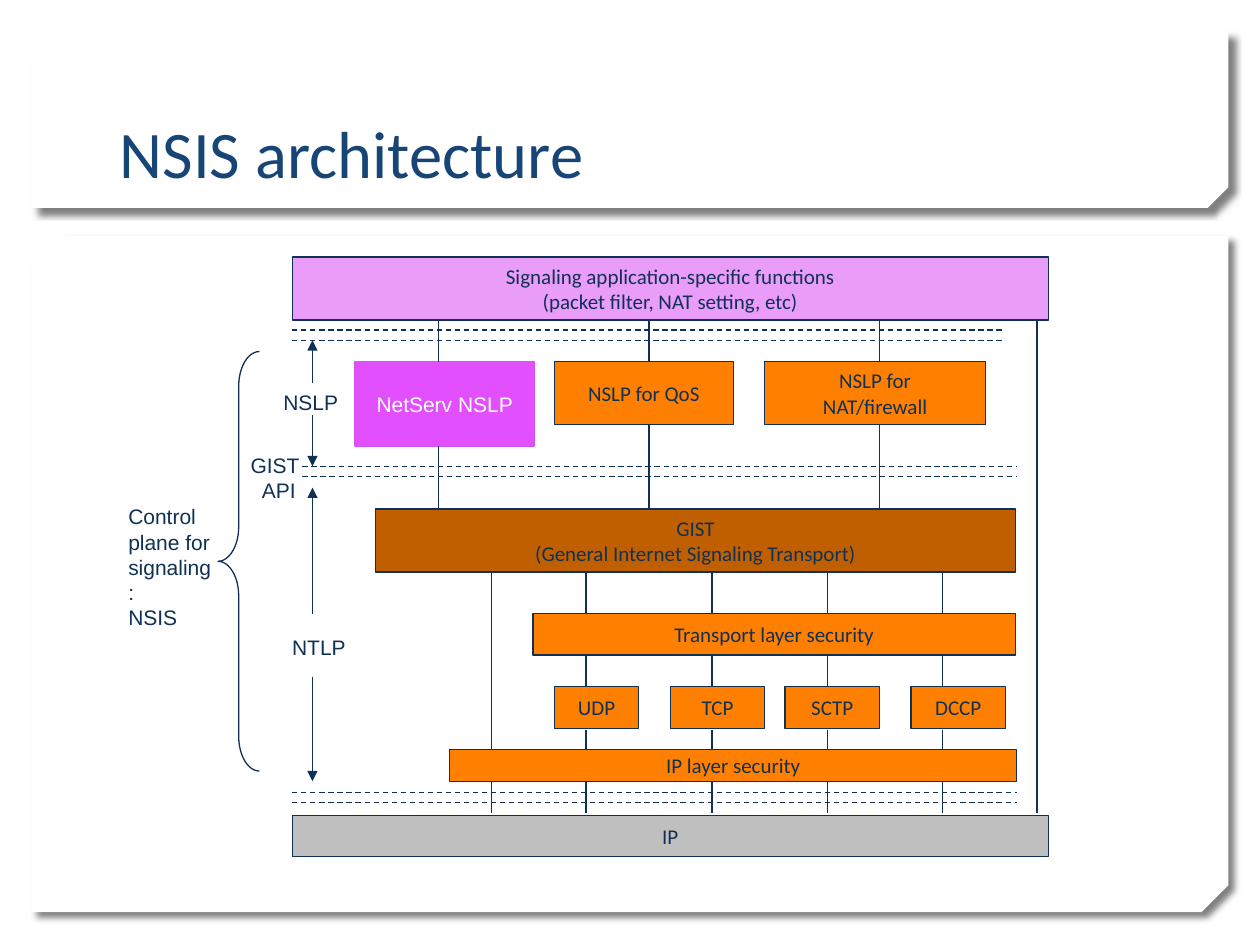
from dataclasses import dataclass

from lxml import etree
from pptx import Presentation
from pptx.dml.color import RGBColor
from pptx.enum.dml import MSO_LINE
from pptx.enum.shapes import MSO_CONNECTOR, MSO_SHAPE as Preset
from pptx.enum.text import MSO_ANCHOR as Anchor, MSO_AUTO_SIZE as AutoSize, PP_ALIGN as Align
from pptx.oxml.ns import qn
from pptx.util import Inches, Pt


@dataclass(frozen=True)
class Theme:
    """Colours, fonts and type sizes of the slide."""
    ink: str = "103154"
    title: str = "174576"
    white: str = "FFFFFF"
    shadow: str = "000000"
    lilac: str = "E99CF8"
    magenta: str = "E14FFF"
    magenta_edge: str = "D854F2"
    orange: str = "FF7F01"
    brown: str = "C05F00"
    grey: str = "BFBFBF"
    heading_font: str = "Calibri"
    label_font: str = "Arial"
    title_size: float = 38
    body_size: float = 12
    thin: float = 0.75
    medium: float = 1


def write_text(frame, text, *, font, size, color, align=Align.LEFT, anchor=Anchor.TOP, wrap=False):
    """Fill a text frame, one paragraph per line of text."""
    frame.word_wrap = wrap
    frame.vertical_anchor = anchor
    for number, line in enumerate(text.split("\n")):
        paragraph = frame.paragraphs[0] if number == 0 else frame.add_paragraph()
        paragraph.alignment = align
        run = paragraph.add_run()
        run.text = line
        run.font.name = font
        run.font.size = Pt(size)
        run.font.color.rgb = RGBColor.from_string(color)


class ArchitectureSlide:
    """Draws the parts of a layered architecture on one slide."""

    def __init__(self, slide, theme):
        """Keep the slide and its theme."""
        self.slide = slide
        self.theme = theme

    def shape(self, preset, bounds, fill=None, edge=None, weight=None):
        """Add a preset shape with a plain fill and outline."""
        shape = self.slide.shapes.add_shape(preset, *map(Inches, bounds))
        shape.shadow.inherit = False
        if fill:
            shape.fill.solid()
            shape.fill.fore_color.rgb = RGBColor.from_string(fill)
        else:
            shape.fill.background()
        if edge:
            shape.line.color.rgb = RGBColor.from_string(edge)
            shape.line.width = Pt(weight or self.theme.thin)
        else:
            shape.line.fill.background()
        return shape

    def panel(self, bounds, snip):
        """Add a white panel with a snipped corner and a soft shadow."""
        panel = self.shape(Preset.SNIP_2_DIAG_RECTANGLE, bounds, self.theme.white)
        panel.adjustments[0] = 0
        panel.adjustments[1] = snip
        properties = panel.element.spPr
        properties.find(qn("a:xfrm")).set("flipV", "1")
        shadow = etree.SubElement(
            properties.find(qn("a:effectLst")), qn("a:outerShdw"), blurRad=str(Pt(4)),
            dist=str(Pt(5)), dir="2700000", algn="tl", rotWithShape="0")
        tint = etree.SubElement(shadow, qn("a:srgbClr"), val=self.theme.shadow)
        etree.SubElement(tint, qn("a:alpha"), val="50000")

    def title(self, text, bounds):
        """Place the title in front of the panels."""
        title = self.slide.shapes.title
        title.left, title.top, title.width, title.height = map(Inches, bounds)
        title.text_frame.auto_size = AutoSize.NONE
        write_text(title.text_frame, text, font=self.theme.heading_font, size=self.theme.title_size,
                   color=self.theme.title, anchor=Anchor.BOTTOM, wrap=True)
        self.slide.shapes.element.append(title.element)

    def block(self, text, bounds, fill, edge=None, weight=None, font=None, color=None):
        """Add a labelled protocol block."""
        block = self.shape(Preset.RECTANGLE, bounds, fill, edge or self.theme.ink, weight)
        write_text(block.text_frame, text, font=font or self.theme.heading_font,
                   size=self.theme.body_size, color=color or self.theme.ink,
                   align=Align.CENTER, anchor=Anchor.MIDDLE)

    def label(self, text, bounds):
        """Add a free label and return its text frame."""
        frame = self.slide.shapes.add_textbox(*map(Inches, bounds)).text_frame
        write_text(frame, text, font=self.theme.label_font, size=self.theme.body_size,
                   color=self.theme.ink)
        frame.auto_size = AutoSize.SHAPE_TO_FIT_TEXT
        return frame

    def line(self, start, end, weight=None, dashed=False, arrow=False):
        """Add a straight line, dashed or with an arrowhead if asked."""
        line = self.slide.shapes.add_connector(MSO_CONNECTOR.STRAIGHT, *map(Inches, (*start, *end)))
        line.line.color.rgb = RGBColor.from_string(self.theme.ink)
        line.line.width = Pt(weight or self.theme.thin)
        if dashed:
            line.line.dash_style = MSO_LINE.DASH
        properties = line.element.spPr
        if arrow:
            etree.SubElement(properties.find(qn("a:ln")), qn("a:tailEnd"), type="triangle")
        etree.SubElement(properties, qn("a:effectLst"))

    def brace(self, bounds):
        """Add a left brace."""
        brace = self.shape(Preset.LEFT_BRACE, bounds, edge=self.theme.ink)
        brace.adjustments[0] = 0.833
        brace.adjustments[1] = 0.5


def main():
    """Build the architecture slide and save it."""
    theme = Theme()
    deck = Presentation()
    deck.slide_width, deck.slide_height = Inches(10), Inches(7.5)
    art = ArchitectureSlide(deck.slides.add_slide(deck.slide_layouts[5]), theme)

    art.panel((0.25, 1.87, 9.5, 5.37), 0.04)
    art.panel((0.25, 0.25, 9.5, 1.4), 0.117)
    art.title("NSIS architecture", (0.85, 0.32, 8.29, 1.25))

    layers = [
        ("Signaling application-specific functions\n(packet filter, NAT setting, etc)",
         (2.32, 2.04, 6, 0.5), theme.lilac),
        ("NSLP for QoS", (4.4, 2.87, 1.42, 0.5), theme.orange),
        ("NSLP for\nNAT/firewall", (6.07, 2.87, 1.75, 0.5), theme.orange),
        ("GIST\n(General Internet Signaling Transport)", (2.98, 4.04, 5.08, 0.5), theme.brown),
        ("Transport layer security", (4.23, 4.87, 3.83, 0.33), theme.orange),
        ("IP layer security", (3.57, 5.95, 4.5, 0.25), theme.orange),
        ("IP", (2.32, 6.47, 6, 0.33), theme.grey),
    ]
    for text, bounds, fill in layers:
        art.block(text, bounds, fill)
    transports = [("UDP", 4.4, 0.67), ("TCP", 5.32, 0.75), ("SCTP", 6.23, 0.75), ("DCCP", 7.23, 0.75)]
    for protocol, left, width in transports:
        art.block(protocol, (left, 5.45, width, 0.33), theme.orange)
    art.block("NetServ NSLP", (2.82, 2.87, 1.42, 0.67), theme.magenta, edge=theme.magenta_edge,
              weight=theme.medium, font=theme.label_font, color=theme.white)

    application_gaps = [(2.54, 2.87), (3.37, 4.04)]
    transport_gaps = [(4.54, 4.87), (5.2, 5.45), (5.79, 5.95), (6.2, 6.45)]
    bypass_gaps = [(4.54, 5.95), (6.2, 6.45)]
    link_groups = [
        ((5.15, 6.98), application_gaps),
        ((4.65, 5.65, 6.57, 7.48), transport_gaps),
        ((3.9,), bypass_gaps),
        ((8.23,), [(2.54, 6.45)]),
        ((3.48,), [(2.54, 2.87)]),
    ]
    for columns, gaps in link_groups:
        for x in columns:
            for top, bottom in gaps:
                art.line((x, top), (x, bottom))
    art.line((3.48, 3.54), (3.48, 4.04), weight=theme.medium)

    for left, right, upper in [(2.32, 7.98, 2.62), (2.4, 8.07, 3.7), (2.32, 8.07, 6.29)]:
        for y in (upper, upper + 0.08):
            art.line((left, y), (right, y), dashed=True)
    for start, tip in [(3.04, 2.7), (3.29, 3.7), (4.87, 3.87), (5.37, 6.2)]:
        art.line((2.48, start), (2.48, tip), arrow=True)

    art.label("NTLP", (2.22, 4.99, 0.63, 0.3))
    interface = art.label("GIST\nAPI", (1.89, 3.54, 0.59, 0.5))
    interface.paragraphs[1].element.get_or_add_pPr().set("marL", str(Inches(0.09))) if hasattr(
        interface.paragraphs[1], "element") else interface.paragraphs[1]._p.get_or_add_pPr().set(
        "marL", str(Inches(0.09)))
    art.label("NSLP", (2.15, 3.04, 0.64, 0.3))
    art.label("Control\nplane for\nsignaling:\nNSIS", (0.92, 3.95, 0.9, 0.9))
    art.brace((1.73, 2.79, 0.33, 3.33))

    deck.save("out.pptx")


if __name__ == "__main__":
    main()
